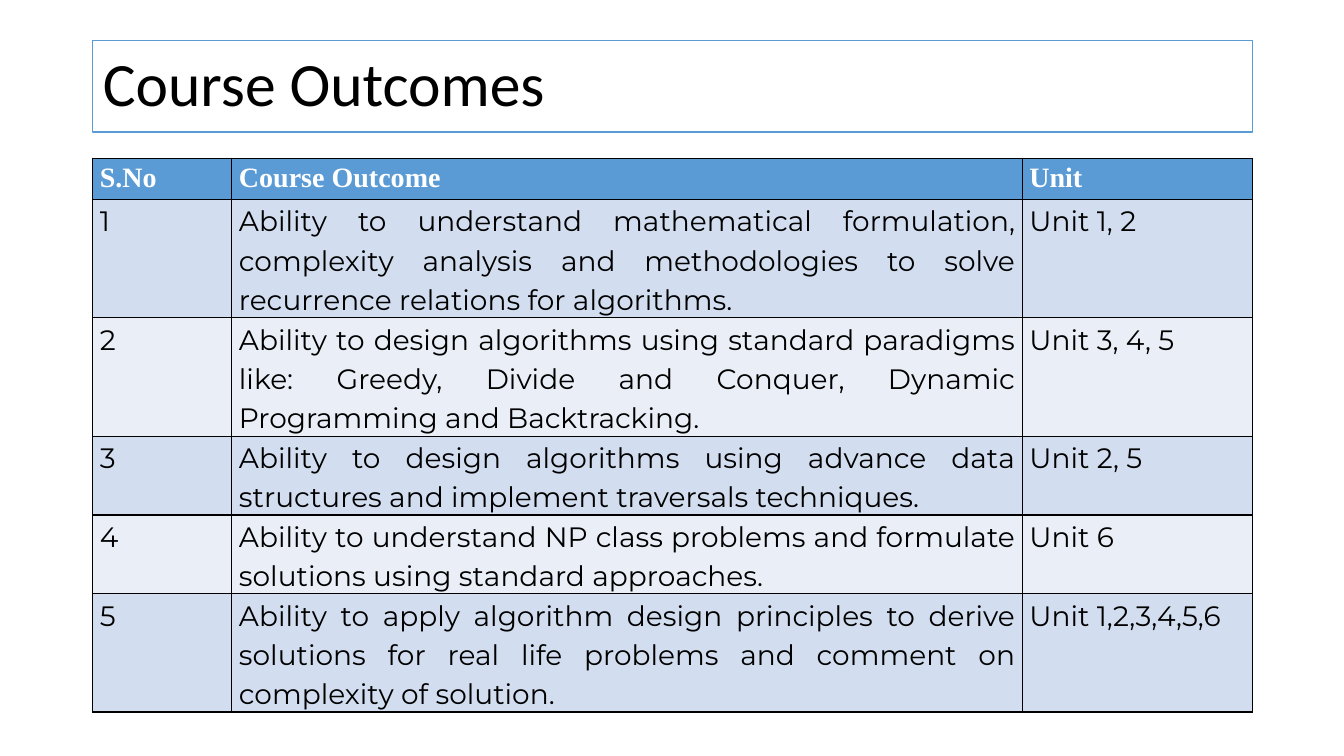
from pptx import Presentation, util as u
from pptx.dml.color import RGBColor
from pptx.enum import text as t
from pptx.oxml import parse_xml
from pptx.oxml.ns import nsdecls

PX = 9144  # EMU per px, 100 px to the inch
HUES = {"blue": "5B9BD5", "band": "D2DEEF", "pale": "EAEFF7",
        "ink": "000000", "white": "FFFFFF"}
HEAD = ("S.No", "Course Outcome", "Unit")
GOALS = [
    ("Ability to understand mathematical formulation, complexity analysis and "
     "methodologies to solve recurrence relations for algorithms.", "Unit 1, 2"),
    ("Ability to design algorithms using standard paradigms like: Greedy, Divide "
     "and Conquer, Dynamic Programming and Backtracking.", "Unit 3, 4, 5"),
    ("Ability to design algorithms using advance data structures and implement "
     "traversals techniques.", "Unit 2, 5"),
    ("Ability to understand NP class problems and formulate solutions using "
     "standard approaches.", "Unit 6"),
    ("Ability to apply algorithm design principles to derive solutions for real "
     "life problems and comment on complexity of solution.", "Unit 1,2,3,4,5,6"),
]


def hue(name):
    return RGBColor.from_string(HUES[name])


class Deck:
    """Holds the style and the current slide."""

    def __init__(self, wide, high):
        self.prs = Presentation()
        self.prs.slide_width, self.prs.slide_height = wide * PX, high * PX
        self.slide = self.prs.slides.add_slide(self.prs.slide_layouts[5])

    def label(self, frame, words, face, size, ink, align, gap, bold=False):
        frame.text = words
        para = frame.paragraphs[0]
        para.alignment, para.line_spacing = align, gap
        font = para.runs[0].font
        font.name, font.size, font.bold = face, u.Pt(size), bold
        font.color.rgb = hue(ink)

    def title(self, words, x, y, w, h):
        box = self.slide.shapes.title
        box.left, box.top, box.width, box.height = (n * PX for n in (x, y, w, h))
        box.fill.solid()
        box.fill.fore_color.rgb = hue("white")
        box.line.color.rgb = hue("blue")
        box.line.width = u.Pt(1)
        frame = box.text_frame
        self.label(frame, words, "Calibri", 44, "ink", t.PP_ALIGN.LEFT, 0.9)
        frame.word_wrap = True
        frame.auto_size = t.MSO_AUTO_SIZE.NONE
        frame.vertical_anchor = t.MSO_ANCHOR.MIDDLE

    def cell(self, cell, words, fill, face, ink, bold):
        cell.margin_left = cell.margin_right = 7 * PX
        cell.margin_top = cell.margin_bottom = 0
        self.label(cell.text_frame, words, face, 20, ink,
                   t.PP_ALIGN.JUSTIFY, 1.15, bold)
        cell.fill.solid()
        cell.fill.fore_color.rgb = hue(fill)
        self.edge(cell)

    def edge(self, cell):
        """Draw the four borders of a cell."""
        props = cell._tc.get_or_add_tcPr()
        for spot, side in enumerate("LRTB"):
            props.insert(spot, parse_xml(
                f'<a:ln{side} {nsdecls("a")} w="{u.Pt(1)}"><a:solidFill>'
                f'<a:srgbClr val="{HUES["ink"]}"/></a:solidFill></a:ln{side}>'))

    def table(self, rows, x, y, cols, high):
        grid = self.slide.shapes.add_table(
            len(rows), len(cols), x * PX, y * PX,
            sum(cols) * PX, len(rows) * high * PX).table
        for col, wide in zip(grid.columns, cols):
            col.width = wide * PX
        for r, row in enumerate(rows):
            if r == 0:
                style = ("blue", "Times New Roman", "white", True)
            else:
                style = ("band" if r % 2 else "pale", "Montserrat", "ink", False)
            for c, words in enumerate(row):
                self.cell(grid.cell(r, c), words, *style)


def main():
    deck = Deck(1333, 750)
    deck.title("Course Outcomes", 92, 40, 1150, 91)
    rows = [HEAD] + [(str(n), *goal) for n, goal in enumerate(GOALS, 1)]
    deck.table(rows, 92, 157, (138, 784, 228), 41)
    deck.prs.save("out.pptx")


if __name__ == "__main__":
    main()
